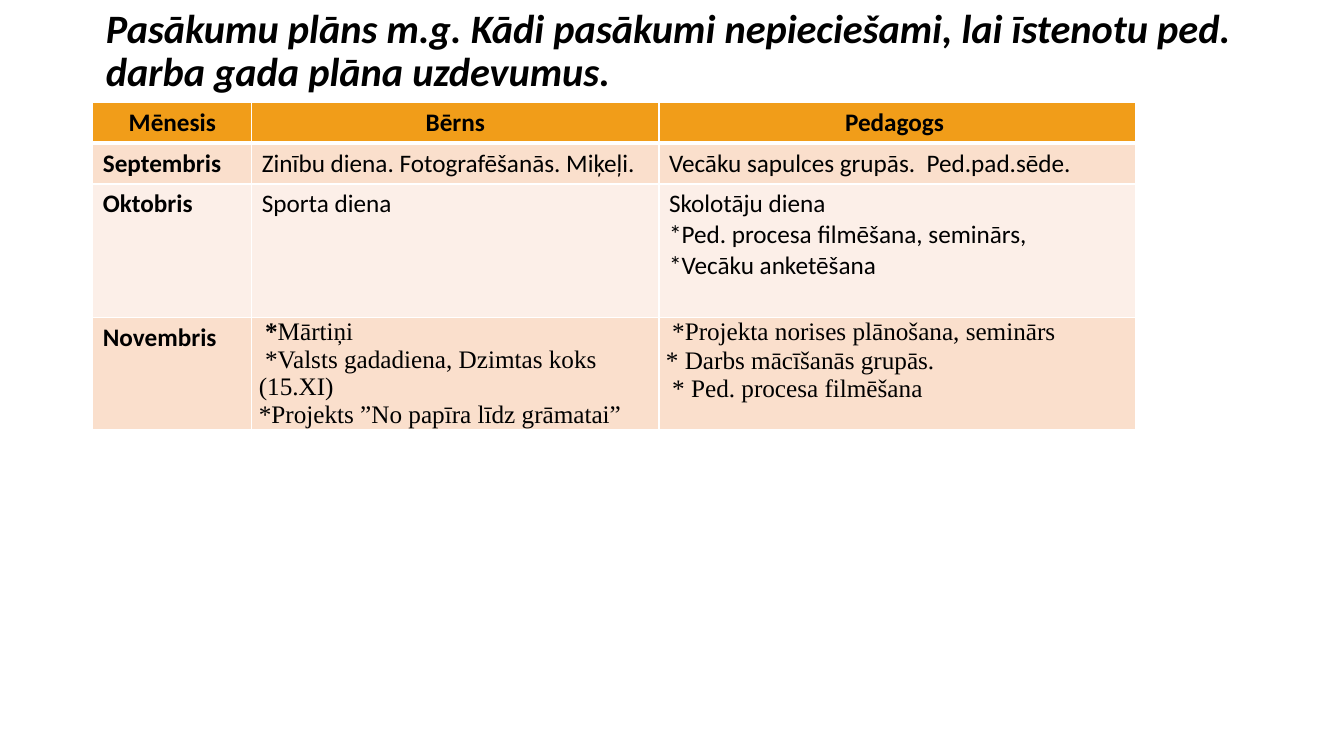
"""Builds the monthly activity plan slide."""
from dataclasses import dataclass

from lxml.etree import SubElement
from pptx import Presentation
from pptx.dml.color import RGBColor
from pptx.enum.text import MSO_ANCHOR, MSO_AUTO_SIZE, PP_ALIGN
from pptx.oxml.ns import qn
from pptx.util import Pt


@dataclass(frozen=True)
class Theme:
    """Colours, fonts and sizes of the slide."""
    ink: str = "000000"
    rule: str = "FFFFFF"
    header: str = "F19D19"
    bands: tuple = ("FADFCC", "FCEFE8")
    sans: str = "Calibri"
    accent: str = "Roboto"
    serif: str = "Times New Roman"
    title_size: float = 28.8
    body_size: float = 18
    thin: float = 1
    thick: float = 3


THEME = Theme()


def add_span(para, text, size=THEME.body_size, font=THEME.sans, bold=False, italic=False):
    """Add formatted text to a paragraph."""
    span = para.add_run()
    span.text = text
    span.font.size = Pt(size)
    span.font.name = font
    span.font.bold = bold
    span.font.italic = italic
    span.font.color.rgb = RGBColor.from_string(THEME.ink)


class PlanPage:
    """Holds the theme and the current slide."""

    def __init__(self, deck, theme):
        """Add a title-only slide to the deck."""
        self.theme = theme
        self.page = deck.slides.add_slide(deck.slide_layouts[5])

    def title(self, text, left, top, width, height):
        """Place and fill the title."""
        box = self.page.shapes.title
        box.left, box.top, box.width, box.height = map(Pt, (left, top, width, height))
        frame = box.text_frame
        frame.word_wrap = True
        frame.auto_size = MSO_AUTO_SIZE.NONE
        frame.vertical_anchor = MSO_ANCHOR.MIDDLE
        para = frame.paragraphs[0]
        para.alignment = PP_ALIGN.LEFT
        para.line_spacing = 0.9
        add_span(para, text, size=self.theme.title_size, bold=True, italic=True)

    def borders(self, cell, **widths):
        """Draw the cell borders in the rule colour."""
        properties = cell._tc.get_or_add_tcPr()
        for side in "LRTB":
            width = widths.get(side, self.theme.thin)
            line = SubElement(properties, qn(f"a:ln{side}"), w=str(Pt(width)))
            fill = SubElement(line, qn("a:solidFill"))
            SubElement(fill, qn("a:srgbClr"), val=self.theme.rule)

    def cell(self, cell, paragraphs, color, centred=False, tight=False, **widths):
        """Fill one cell; each paragraph is a list of (text, format) pairs."""
        self.borders(cell, **widths)
        cell.fill.solid()
        cell.fill.fore_color.rgb = RGBColor.from_string(color)
        if tight:
            cell.margin_left = cell.margin_right = Pt(5)
            cell.margin_top = cell.margin_bottom = Pt(0)
        for index, spans in enumerate(paragraphs):
            frame = cell.text_frame
            para = frame.add_paragraph() if index else frame.paragraphs[0]
            para.alignment = PP_ALIGN.CENTER if centred else PP_ALIGN.LEFT
            for text, style in spans:
                add_span(para, text, **style)

    def table(self, header, rows, left, top, columns, heights):
        """Add the plan table with a header and banded rows."""
        frame = self.page.shapes.add_table(
            len(heights), len(columns), Pt(left), Pt(top), Pt(sum(columns)), Pt(sum(heights)))
        table = frame.table
        for column, width in zip(table.columns, columns):
            column.width = Pt(width)
        for row, height in zip(table.rows, heights):
            row.height = Pt(height)
        thick = self.theme.thick
        for column, label in enumerate(header):
            self.cell(table.cell(0, column), [[(label, {"bold": True})]],
                      self.theme.header, centred=True, B=thick)
        for number, row in enumerate(rows, 1):
            color = self.theme.bands[(number - 1) % 2]
            for column, paragraphs in enumerate(row):
                tight = paragraphs[0][0][1].get("font") is not None
                self.cell(table.cell(number, column), paragraphs, color, tight=tight,
                          T=thick if number == 1 else self.theme.thin)


def lines(*texts, **style):
    """Return one single-span paragraph for each text."""
    return [[(text, style)] for text in texts]


def main():
    """Build and save the deck."""
    deck = Presentation()
    deck.slide_width, deck.slide_height = Pt(960), Pt(540)
    page = PlanPage(deck, THEME)
    page.title("Pasākumu plāns m.g. Kādi pasākumi nepieciešami, lai īstenotu ped. "
               "darba gada plāna uzdevumus.", 68.4, 7.9, 828.7, 58.3)
    serif = {"font": THEME.serif}
    child_november = [
        [(" *", {"font": THEME.serif, "bold": True}), ("Mārtiņi", serif)],
        *lines(" *Valsts gadadiena, Dzimtas koks (15.XI)",
               "*Projekts ”No papīra līdz grāmatai”", **serif)]
    teacher_november = [
        [(" ", {"font": THEME.accent, "bold": True}),
         ("*Projekta norises plānošana, seminārs", serif)],
        *lines("* Darbs mācīšanās grupās.", " * Ped. procesa filmēšana", **serif)]
    rows = [
        [lines("Septembris", bold=True),
         lines("Zinību diena. Fotografēšanās. Miķeļi."),
         lines("Vecāku sapulces grupās.  Ped.pad.sēde.")],
        [lines("Oktobris", bold=True),
         lines("Sporta diena"),
         lines("Skolotāju diena", "*Ped. procesa filmēšana, seminārs,",
               "*Vecāku anketēšana")],
        [lines("Novembris", bold=True), child_november, teacher_november]]
    page.table(["Mēnesis", "Bērns", "Pedagogs "], rows, 66.3, 73,
               columns=[113.6, 290.8, 340.6], heights=[29.2, 29.2, 95.5, 79.3])
    deck.save("out.pptx")


if __name__ == "__main__":
    main()
